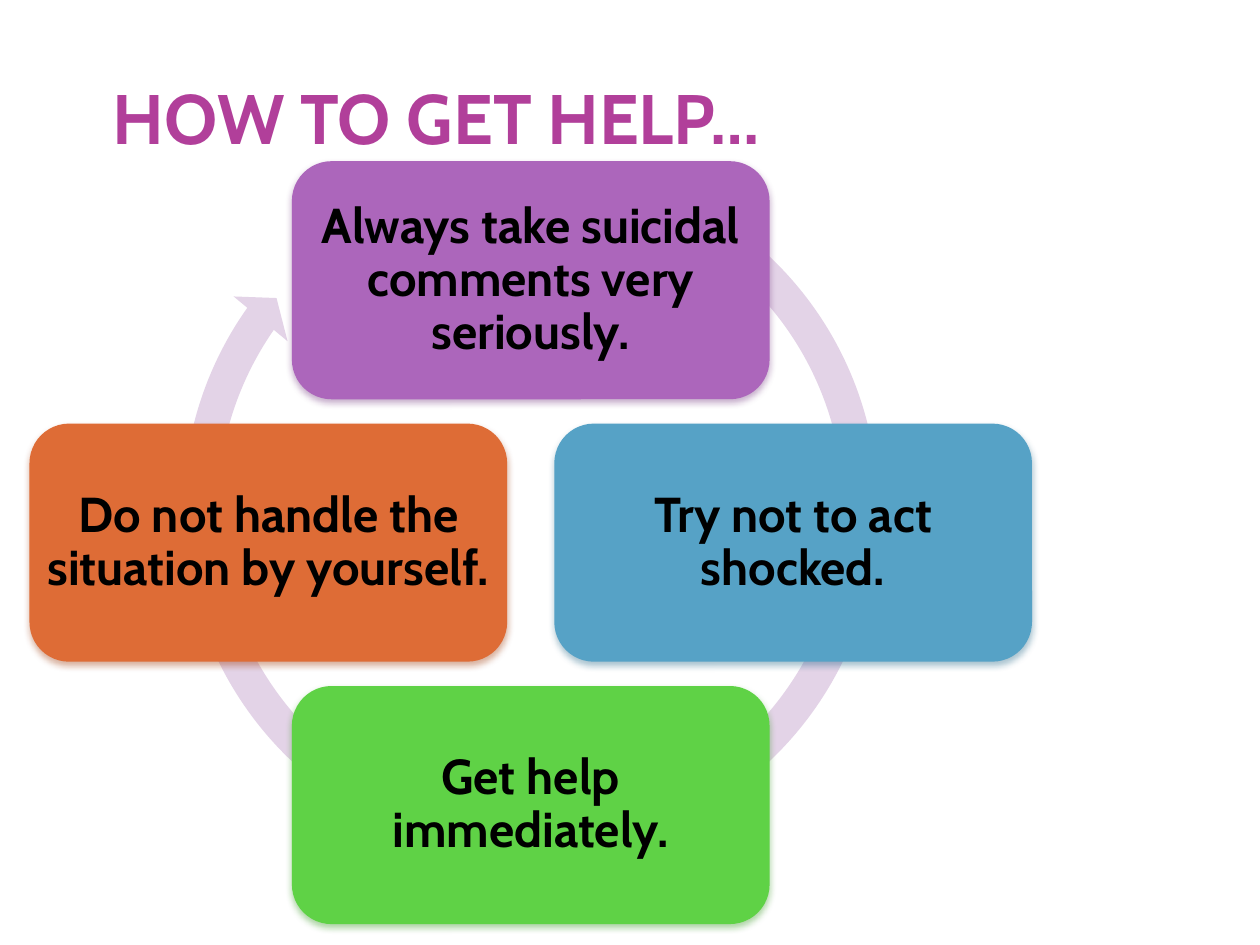
from lxml.etree import SubElement as Sub
from pptx import Presentation
from pptx.dml.color import RGBColor
from pptx.enum.shapes import MSO_SHAPE as Kind
from pptx.enum.text import MSO_ANCHOR as Anchor, PP_ALIGN as Align
from pptx.oxml import parse_xml
from pptx.oxml.ns import nsdecls, qn
from pptx.util import Cm, Pt

PINK = RGBColor(0xB1, 0x3F, 0x9A)
PLUM = RGBColor(0x5E, 0x1A, 0x50)
LILAC = RGBColor(0xE3, 0xD3, 0xE7)
BLACK = RGBColor(0, 0, 0)

# Content: text, fill, shadow, column and row step from the centre
TITLE = "HOW TO GET HELP…"
STEPS = [
    ("Always take suicidal comments very seriously.",
     RGBColor(0xAC, 0x66, 0xBB), RGBColor(0x6E, 0x30, 0x7B), 0, -1),
    ("Try not to act shocked.",
     RGBColor(0x56, 0xA2, 0xC6), RGBColor(0x23, 0x66, 0x86), 1, 0),
    ("Get help immediately.",
     RGBColor(0x5F, 0xD2, 0x46), RGBColor(0x2B, 0x91, 0x15), 0, 1),
    ("Do not handle the situation by yourself.",
     RGBColor(0xDE, 0x6C, 0x36), RGBColor(0x9C, 0x37, 0x07), -1, 0),
]

# Layout in cm
MID_X, MID_Y, STEP = 10.7, 10.94, 5.29
BOX_W, BOX_H = 9.63, 4.8
RING, RING_Y = 14.73, 10.26
BEND = [0.047, 2.729, 129.077, 179.79, 0.048]


def write(shape, text, size, color, anchor, pads, spacing):
    frame = shape.text_frame
    side, top = pads
    look = {"word_wrap": True, "vertical_anchor": anchor,
            "margin_left": Cm(side), "margin_right": Cm(side),
            "margin_top": Cm(top), "margin_bottom": Cm(top)}
    for name, value in look.items():
        setattr(frame, name, value)
    para = frame.paragraphs[0]
    para.alignment, para.line_spacing = Align.CENTER, spacing
    run = para.add_run()
    run.text = text
    for name, value in {"name": "Cabin", "size": Pt(size), "bold": True}.items():
        setattr(run.font, name, value)
    run.font.color.rgb = color
    return run


def draw(slide, kind, mid_x, mid_y, width, height, fill):
    shape = slide.shapes.add_shape(
        kind, Cm(mid_x - width / 2), Cm(mid_y - height / 2), Cm(width), Cm(height))
    shape.shadow.inherit = False
    shape.fill.solid()
    shape.fill.fore_color.rgb = fill
    shape.line.fill.background()
    return shape


def shade(shape, color):
    effects = shape.element.spPr.find(qn("a:effectLst"))
    drop = Sub(effects, qn("a:outerShdw"), blurRad=str(Pt(4)), dist=str(Pt(2)),
               dir="5400000", rotWithShape="0")
    tint = Sub(drop, qn("a:srgbClr"), val=str(color))
    Sub(tint, qn("a:alpha"), val="38000")


def main():
    deck = Presentation()
    deck.slide_width, deck.slide_height = Cm(25.4), Cm(19.05)
    slide = deck.slides.add_slide(deck.slide_layouts[5])

    # Title with a hairline outline
    title = slide.shapes.title
    title.left, title.top, title.width, title.height = map(Cm, (-1.27, 0.84, 20.12, 2.36))
    run = write(title, TITLE, 40, PINK, Anchor.BOTTOM, (0.13, 0), 1.0)
    run.font.fill  # the outline goes ahead of the fill
    line = parse_xml(f'<a:ln {nsdecls("a")} w="500"><a:solidFill>'
                     f'<a:srgbClr val="{PLUM}"/></a:solidFill></a:ln>')
    run.font._element.insert(0, line)

    # Ring arrow behind the boxes
    ring = draw(slide, Kind.CIRCULAR_ARROW, MID_X, RING_Y, RING, RING, LILAC)
    for i, value in enumerate(BEND):
        ring.adjustments[i] = value

    # Four boxes around the centre
    for text, fill, dark, col, row in STEPS:
        box = draw(slide, Kind.ROUNDED_RECTANGLE, MID_X + col * STEP,
                   MID_Y + row * STEP, BOX_W, BOX_H, fill)
        shade(box, dark)
        write(box, text, 28, BLACK, Anchor.MIDDLE, (0.07, 0.07), 0.9)

    deck.save("out.pptx")


if __name__ == "__main__":
    main()
